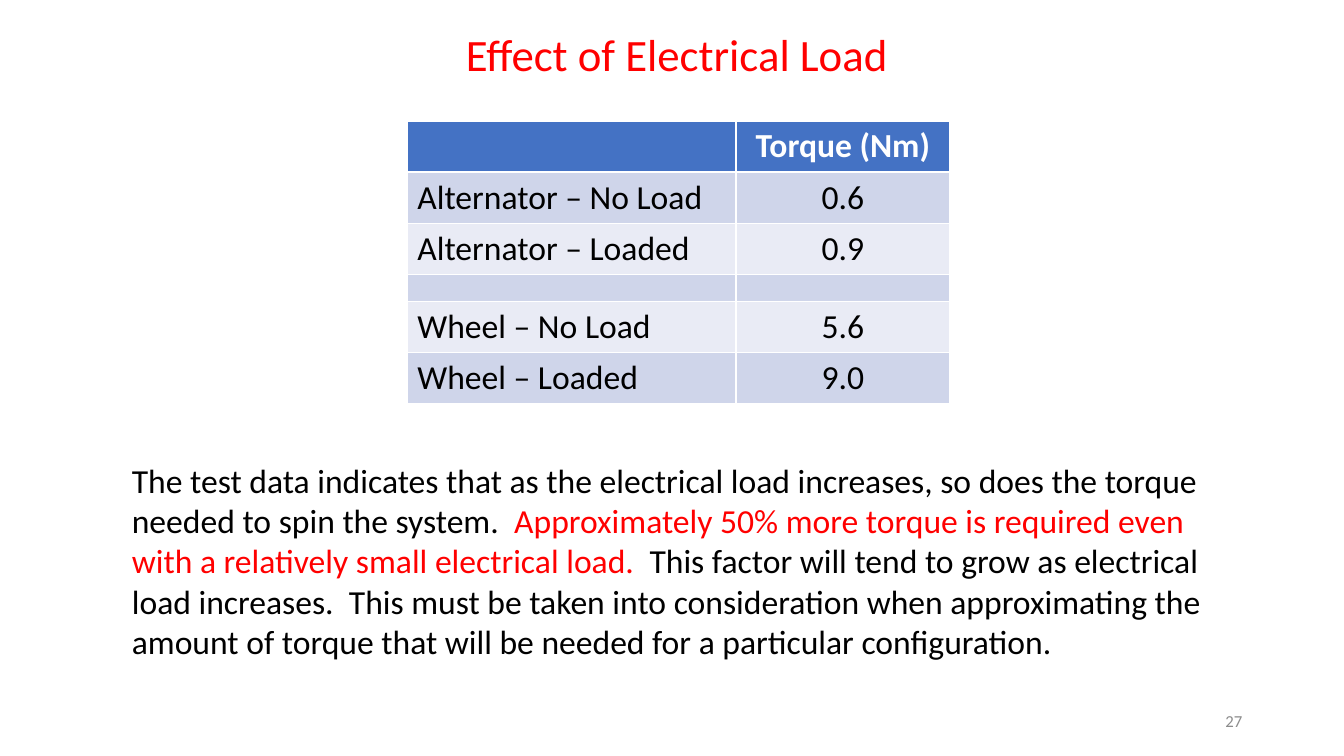
from pptx import Presentation
from pptx.dml.color import RGBColor
from pptx.enum.text import MSO_ANCHOR, PP_ALIGN
from pptx.util import Inches, Pt

BLACK, WHITE, RED, GRAY = "000000", "FFFFFF", "FF0000", "8C8C8C"
HEADER_FILL = "4472C4"
BAND_FILLS = ["E9EBF5", "CFD5EA"]
TORQUE_ROWS = [
    ("", "Torque (Nm)"),
    ("Alternator – No Load", "0.6"),
    ("Alternator – Loaded", "0.9"),
    ("", ""),
    ("Wheel – No Load", "5.6"),
    ("Wheel – Loaded", "9.0"),
]
FINDINGS = [
    ("The test data indicates that as the electrical load increases, so does "
     "the torque needed to spin the system.  ", BLACK),
    ("Approximately 50% more torque is required even with a relatively small "
     "electrical load.", RED),
    ("  This factor will tend to grow as electrical load increases.  This must "
     "be taken into consideration when approximating the amount of torque that "
     "will be needed for a particular configuration.", BLACK),
]


def paint(target, color):
    target.rgb = RGBColor.from_string(color)


def format_paragraph(para, size, color, align=PP_ALIGN.LEFT):
    para.alignment = align
    para.font.name = "Calibri"
    para.font.size = Pt(size)
    paint(para.font.color, color)


def add_title(page, text):
    title = page.shapes.title
    title.left, title.top = Inches(4.38), Inches(0.21)
    title.width, title.height = Inches(4.67), Inches(0.64)
    title.text_frame.text = text
    format_paragraph(title.text_frame.paragraphs[0], 32, RED, PP_ALIGN.CENTER)


def add_text(page, left, top, width, height, spans, size,
             align=PP_ALIGN.LEFT, anchor=MSO_ANCHOR.TOP):
    box = page.shapes.add_textbox(
        Inches(left), Inches(top), Inches(width), Inches(height))
    frame = box.text_frame
    frame.word_wrap = True
    frame.vertical_anchor = anchor
    para = frame.paragraphs[0]
    format_paragraph(para, size, spans[0][1], align)
    for text, color in spans:
        span = para.add_run()
        span.text = text
        paint(span.font.color, color)


def fill_cell(cell, text, size, fill, color, align, bold):
    cell.fill.solid()
    paint(cell.fill.fore_color, fill)
    cell.text = text
    para = cell.text_frame.paragraphs[0]
    format_paragraph(para, size, color, align)
    para.font.bold = bold


def add_torque_table(page, rows):
    table = page.shapes.add_table(
        len(rows), 2, Inches(4.04), Inches(1.2), Inches(5.38), Inches(2.77)).table
    table.columns[0].width = Inches(3.26)
    table.columns[1].width = Inches(2.12)
    for index, values in enumerate(rows):
        header = index == 0
        spacer = not any(values)
        table.rows[index].height = Inches(0.26 if spacer else 0.5)
        for column, text in enumerate(values):
            fill_cell(
                table.cell(index, column), text,
                10 if spacer else 24,
                HEADER_FILL if header else BAND_FILLS[index % 2],
                WHITE if header else BLACK,
                PP_ALIGN.CENTER if column else PP_ALIGN.LEFT,
                header)


def main():
    deck = Presentation()
    deck.slide_width, deck.slide_height = Inches(13.33), Inches(7.5)
    page = deck.slides.add_slide(deck.slide_layouts[5])
    add_title(page, "Effect of Electrical Load")
    add_torque_table(page, TORQUE_ROWS)
    add_text(page, 1.21, 4.51, 11.03, 2.12, FINDINGS, 24)
    add_text(page, 9.42, 6.95, 3, 0.4, [("27", GRAY)], 12,
             PP_ALIGN.RIGHT, MSO_ANCHOR.MIDDLE)
    deck.save("out.pptx")


if __name__ == "__main__":
    main()
